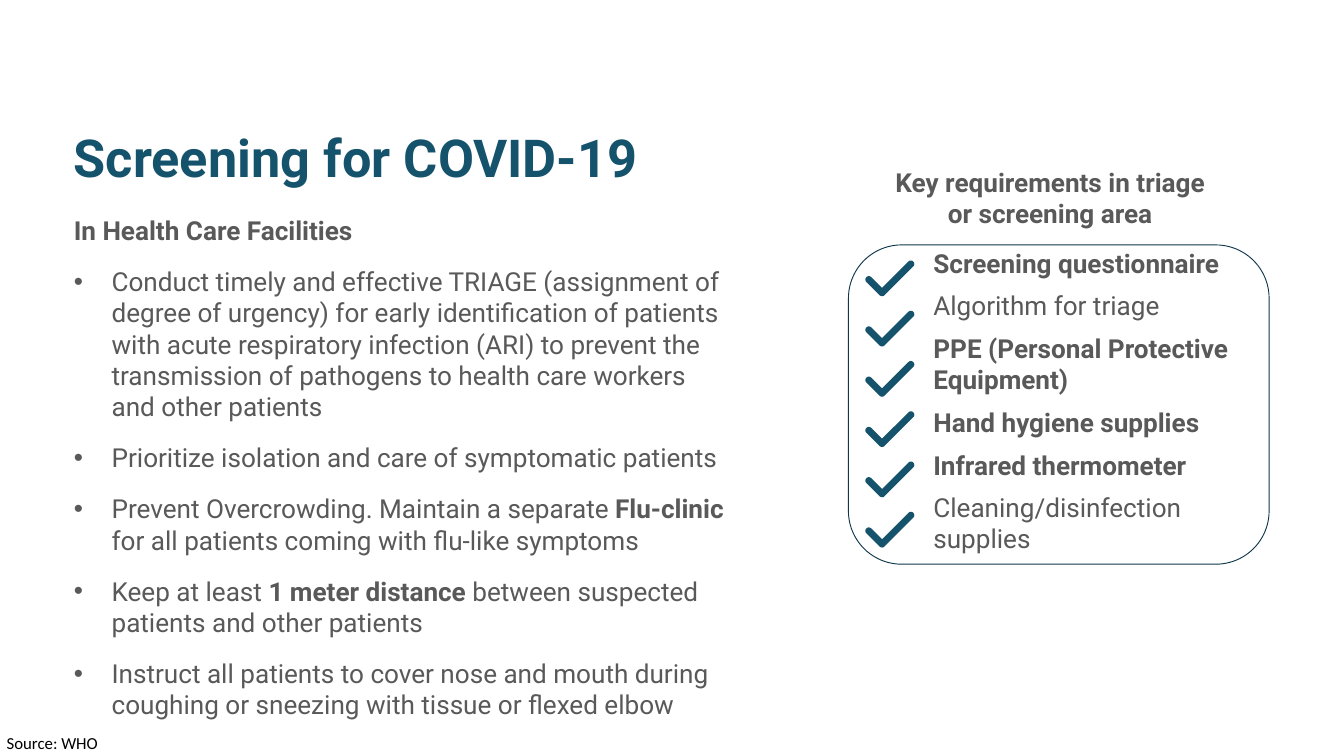
from dataclasses import dataclass
from math import cos, radians, sin, sqrt

from lxml import etree
from pptx import Presentation
from pptx.dml.color import RGBColor
from pptx.enum.shapes import MSO_SHAPE
from pptx.enum.text import MSO_ANCHOR, PP_ALIGN
from pptx.oxml.ns import qn
from pptx.util import Cm, Pt

ROUNDED = MSO_SHAPE.ROUNDED_RECTANGLE
TOP, BOTTOM = MSO_ANCHOR.TOP, MSO_ANCHOR.BOTTOM
LEFT, CENTER = PP_ALIGN.LEFT, PP_ALIGN.CENTER

COLORS = {"teal": "15526C", "frame": "0E374A", "grey": "595959", "black": "000000"}


@dataclass
class Span:
    text: str
    bold: bool = False


@dataclass
class Para:
    spans: list[Span]
    bullet: bool = False


@dataclass
class TextBlock:
    left: float
    top: float
    width: float
    height: float
    paras: list[Para]
    size: int = 28
    font: str = "Roboto"
    color: str = "grey"
    align: PP_ALIGN = LEFT
    anchor: MSO_ANCHOR = TOP
    before: int = 0
    after: int = 0
    indent: float = 0


@dataclass
class CheckMark:
    """A tick whose two arms rise at 45 degrees from its corner."""
    x: float
    y: float
    short: float = 0.5
    long: float = 1.09
    radius: float = 0.13


def rgb(name: str) -> RGBColor:
    return RGBColor.from_string(COLORS[name])


def plain(text: str) -> Para:
    return Para([Span(text)])


def bold(text: str) -> Para:
    return Para([Span(text, True)])


def bullet(*spans: Span) -> Para:
    return Para(list(spans), True)


def add_text(page, block: TextBlock) -> None:
    box = page.shapes.add_textbox(
        Cm(block.left), Cm(block.top), Cm(block.width), Cm(block.height))
    frame = box.text_frame
    frame.word_wrap = True
    frame.vertical_anchor = block.anchor
    for index, item in enumerate(block.paras):
        para = frame.add_paragraph() if index else frame.paragraphs[0]
        para.alignment = block.align
        para.space_before = Pt(block.before if index else 0)
        para.space_after = Pt(block.after)
        properties = para._p.get_or_add_pPr()
        if block.indent:
            properties.set("marL", str(Cm(block.indent)))
            properties.set("indent", str(-Cm(block.indent)))
        if item.bullet:
            etree.SubElement(properties, qn("a:buFont")).set("typeface", "Arial")
            etree.SubElement(properties, qn("a:buChar")).set("char", "•")
        for span in item.spans:
            run = para.add_run()
            run.text = span.text
            run.font.name = block.font
            run.font.size = Pt(block.size)
            run.font.bold = span.bold
            run.font.color.rgb = rgb(block.color)


def add_frame(page, left: float, top: float, width: float, height: float) -> None:
    frame = page.shapes.add_shape(ROUNDED, Cm(left), Cm(top), Cm(width), Cm(height))
    frame.shadow.inherit = False
    frame.fill.background()
    frame.line.color.rgb = rgb("frame")
    frame.line.width = Pt(1)


def add_check(page, mark: CheckMark) -> None:
    def arc(x: float, y: float, start: int, end: int) -> list[tuple[float, float]]:
        return [(x + mark.radius * cos(radians(angle)), y + mark.radius * sin(radians(angle)))
                for angle in range(start, end + 1, 15)]

    points = arc(mark.x + mark.long, mark.y - mark.long, -135, 45)
    points += arc(mark.x, mark.y, 45, 135)
    points += arc(mark.x - mark.short, mark.y - mark.short, 135, 315)
    points.append((mark.x, mark.y - mark.radius * sqrt(2)))
    corners = [(Cm(x), Cm(y)) for x, y in points]
    builder = page.shapes.build_freeform(*corners[0])
    builder.add_line_segments(corners[1:], close=True)
    tick = builder.convert_to_shape()
    tick.shadow.inherit = False
    tick.fill.solid()
    tick.fill.fore_color.rgb = rgb("teal")
    tick.line.fill.background()


TITLE = TextBlock(2.54, 1.73, 43.82, 5.51, [bold("Screening for COVID-19")],
                  size=56, color="teal", anchor=BOTTOM)

FACILITIES = TextBlock(2.54, 7.98, 25.4, 17.63, [
    bold("In Health Care Facilities"),
    bullet(Span("Conduct timely and effective TRIAGE (assignment of degree of urgency) "
                "for early identification of patients with acute respiratory infection "
                "(ARI) to prevent the transmission of pathogens to health care workers "
                "and other patients")),
    bullet(Span("Prioritize isolation and care of symptomatic patients")),
    bullet(Span("Prevent Overcrowding. Maintain a separate "), Span("Flu-clinic", True),
           Span(" for all patients coming with flu-like symptoms")),
    bullet(Span("Keep at least "), Span("1 meter distance ", True),
           Span("between suspected patients and other patients")),
    bullet(Span("Instruct all patients to cover nose and mouth during coughing "
                "or sneezing with tissue or flexed elbow")),
], before=15, after=6, indent=1.43)

KEY_HEADING = TextBlock(33.2, 6.15, 12.98, 2.64,
                        [bold("Key requirements in triage or screening area")],
                        align=CENTER)

REQUIREMENTS = TextBlock(35.03, 9.22, 11.94, 11.96, [
    bold("Screening questionnaire"),
    plain("Algorithm for triage"),
    bold("PPE (Personal Protective Equipment)"),
    bold("Hand hygiene supplies"),
    bold("Infrared thermometer"),
    plain("Cleaning/disinfection supplies"),
], before=6, after=6)

SOURCE = TextBlock(0, 27.56, 10.49, 1.02, [plain("Source: WHO")],
                   size=18, font="Calibri", color="black")

CHECK_X, CHECK_Y, CHECK_PITCH = 33.34, 11.07, 1.9


def main() -> None:
    deck = Presentation()
    deck.slide_width, deck.slide_height = Cm(50.8), Cm(28.58)
    page = deck.slides.add_slide(deck.slide_layouts[6])

    # Title and guidance on the left
    add_text(page, TITLE)
    add_text(page, FACILITIES)

    # Checklist on the right, one tick per requirement
    add_frame(page, 32.07, 9.26, 15.9, 12.07)
    for row in range(len(REQUIREMENTS.paras)):
        add_check(page, CheckMark(CHECK_X, CHECK_Y + row * CHECK_PITCH))
    add_text(page, KEY_HEADING)
    add_text(page, REQUIREMENTS)

    # Source line
    add_text(page, SOURCE)

    deck.save("out.pptx")


if __name__ == "__main__":
    main()
